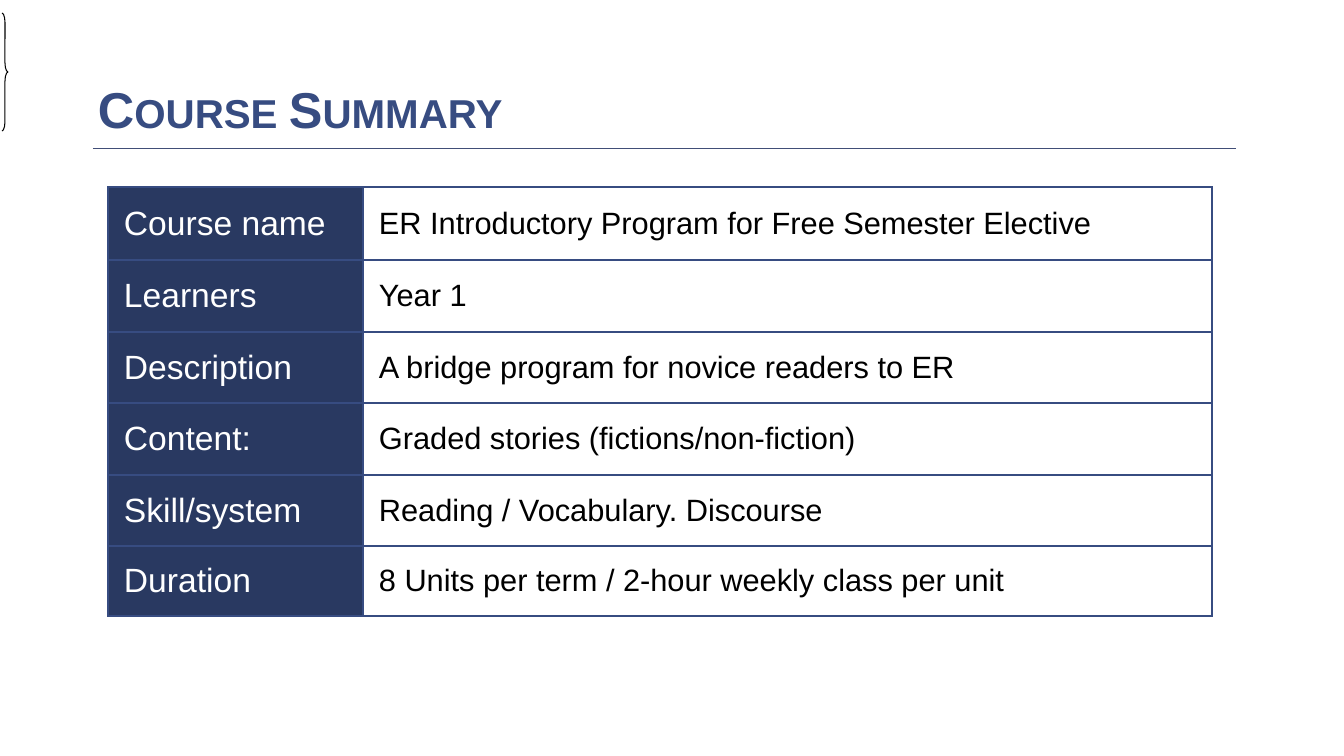
import pptx
import pptx.util
import pptx.dml.color
import pptx.enum.shapes
import pptx.enum.text
import pptx.oxml
import pptx.oxml.ns

TITLE = "Course Summary"
SUMMARY = [
    ("Course name", "ER Introductory Program for Free Semester Elective"),
    ("Learners", "Year 1"),
    ("Description", "A bridge program for novice readers to ER"),
    ("Content:", "Graded stories (fictions/non-fiction)"),
    ("Skill/system", "Reading / Vocabulary. Discourse"),
    ("Duration", "8 Units per term / 2-hour weekly class per unit"),
]
COLORS = {"title": "374C81", "rule": "414E77", "label": "293961",
          "white": "FFFFFF", "black": "000000"}
FONT = "Arial"
COLUMN_WIDTHS = [255, 849]
ROW_HEIGHTS = [73, 72, 71, 72, 71, 70]
COLUMN_STYLES = [(24, "white"), (22, "black")]
MIDDLE = pptx.enum.text.MSO_ANCHOR.MIDDLE


def px(length):
    return pptx.util.Emu(round(length * 914400 / 100.8))


def rgb(name):
    return pptx.dml.color.RGBColor.from_string(COLORS[name])


def add_run(paragraph, text, size, color):
    run = paragraph.add_run()
    run.text = text
    run.font.name = FONT
    run.font.size = pptx.util.Pt(size)
    run.font.color.rgb = rgb(color)
    return run


def add_borders(cell):
    properties = cell._tc.get_or_add_tcPr()
    for position, side in enumerate(("lnL", "lnR", "lnT", "lnB")):
        border = pptx.oxml.parse_xml(
            f'<a:{side} {pptx.oxml.ns.nsdecls("a")} w="12700"><a:solidFill>'
            f'<a:srgbClr val="{COLORS["title"]}"/></a:solidFill></a:{side}>')
        properties.insert(position, border)


def add_title(slide):
    title = slide.shapes.add_textbox(px(85), px(44), px(1080), px(102))
    frame = title.text_frame
    frame.word_wrap = True
    frame.vertical_anchor = pptx.enum.text.MSO_ANCHOR.BOTTOM
    frame.margin_left = frame.margin_right = px(13)
    frame.margin_top = frame.margin_bottom = px(7)
    paragraph = frame.paragraphs[0]
    paragraph.line_spacing = 0.85
    run = add_run(paragraph, TITLE, 36, "title")
    run.font.bold = True
    run._r.get_or_add_rPr().set("cap", "small")

    rule = slide.shapes.add_connector(
        pptx.enum.shapes.MSO_CONNECTOR.STRAIGHT, px(93), px(148), px(1236), px(148))
    rule.line.color.rgb = rgb("rule")
    rule.line.width = pptx.util.Pt(0.5)
    rule._element.spPr.append(
        pptx.oxml.parse_xml(f'<a:effectLst {pptx.oxml.ns.nsdecls("a")}/>'))


def add_brace(slide):
    brace = slide.shapes.add_shape(
        pptx.enum.shapes.MSO_SHAPE.RIGHT_BRACE, px(2), px(13), px(6), px(118))
    brace.adjustments[0] = 1.56
    brace.shadow.inherit = False
    brace.fill.background()
    brace.line.color.rgb = rgb("black")
    brace.line.width = pptx.util.Pt(0.75)


def add_summary(slide):
    summary = slide.shapes.add_table(
        len(SUMMARY), len(COLUMN_WIDTHS), px(108), px(187),
        px(sum(COLUMN_WIDTHS)), px(sum(ROW_HEIGHTS))).table
    summary.first_row = False
    summary.horz_banding = False
    for column, width in zip(summary.columns, COLUMN_WIDTHS):
        column.width = px(width)
    for row, height, texts in zip(summary.rows, ROW_HEIGHTS, SUMMARY):
        row.height = px(height)
        for index, (cell, text) in enumerate(zip(row.cells, texts)):
            cell.vertical_anchor = MIDDLE
            cell.margin_left = px(16)
            cell.margin_right = px(7)
            cell.margin_top = cell.margin_bottom = 0
            if index == 0:
                cell.fill.solid()
                cell.fill.fore_color.rgb = rgb("label")
            else:
                cell.fill.background()
            add_borders(cell)
            add_run(cell.text_frame.paragraphs[0], text, *COLUMN_STYLES[index])


def main():
    deck = pptx.Presentation()
    deck.slide_width, deck.slide_height = px(1344), px(756)
    slide = deck.slides.add_slide(deck.slide_layouts[6])
    add_title(slide)
    add_brace(slide)
    add_summary(slide)
    deck.save("out.pptx")


if __name__ == "__main__":
    main()
